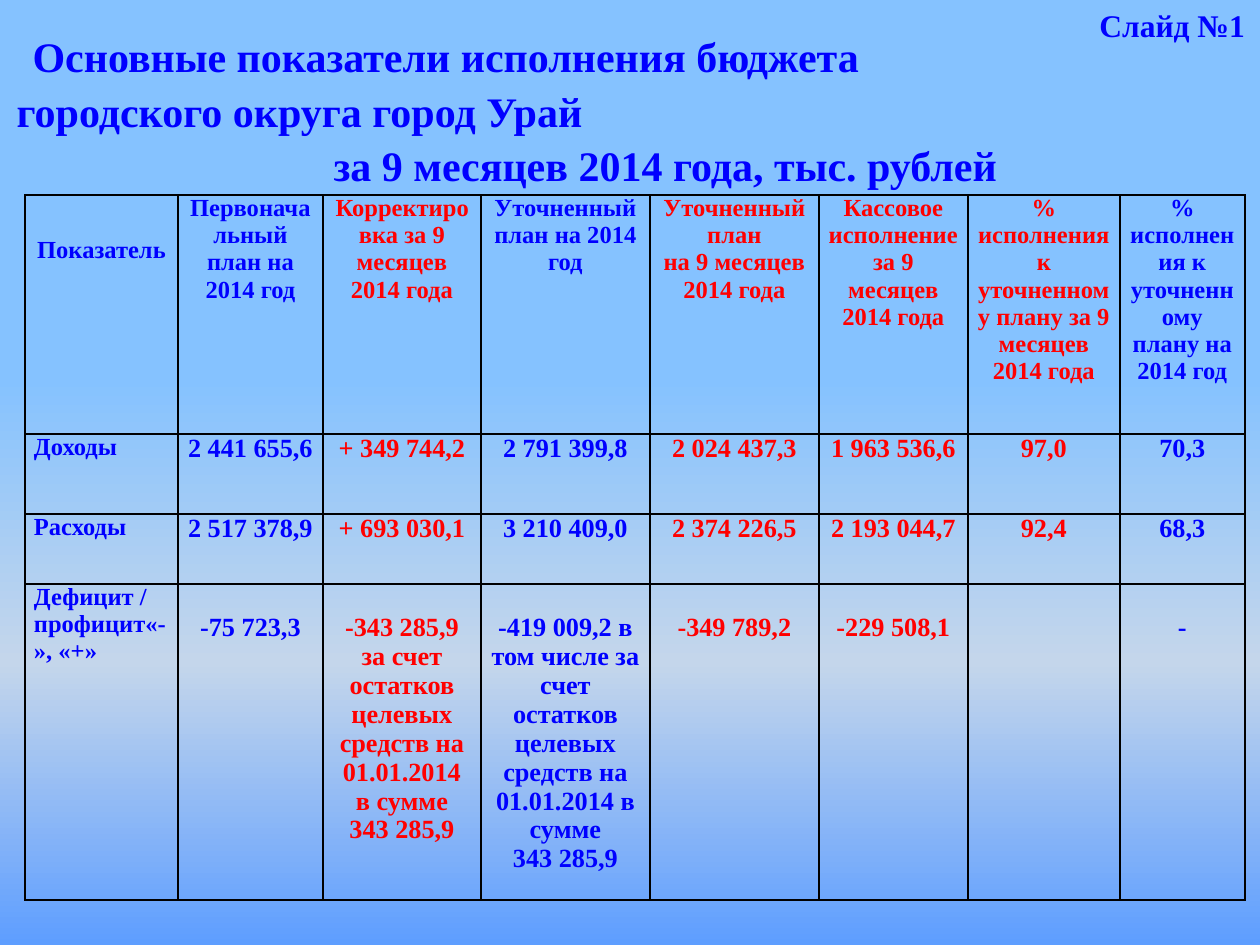
from lxml.etree import SubElement
from copy import deepcopy
from pptx import Presentation
from pptx.dml.color import RGBColor
from pptx.enum.text import MSO_ANCHOR, MSO_AUTO_SIZE, PP_ALIGN
from pptx.oxml.ns import qn
from pptx.util import Emu, Pt

SCALE = 914400 // 126
BLUE, RED, BLACK = "0000FF", "FF0000", "000000"
GRADIENT = [(0.4, "85C2FF"), (0.7, "C4D6EB"), (1.0, "5E9EFF")]
TITLE_LINES = [
    ("Основные показатели исполнения бюджета", 20),
    ("городского округа город Урай", 4),
    ("за 9 месяцев 2014 года, тыс. рублей", 321),
]
COLUMN_WIDTHS = [153, 145, 158, 169, 169, 149, 152, 125]
COLUMN_COLORS = [BLUE, BLUE, RED, BLUE, RED, RED, RED, BLUE]
ROW_HEIGHTS = [239, 80, 70, 316]
ROWS = [
    ["Показатель", "Первоначальный план на 2014 год",
     "Корректировка за 9 месяцев 2014 года", "Уточненный план на 2014 год",
     "Уточненный план\nна 9 месяцев 2014 года",
     "Кассовое исполнение за 9 месяцев 2014 года",
     "% исполнения к уточненному плану за 9 месяцев 2014 года",
     "% исполнения к уточненному плану на 2014 год"],
    ["Доходы", "2 441 655,6", "+ 349 744,2", "2 791 399,8",
     "2 024 437,3", "1 963 536,6", "97,0", "70,3"],
    ["Расходы", "2 517 378,9", "+ 693 030,1", "3 210 409,0",
     "2 374 226,5", "2 193 044,7", "92,4", "68,3"],
    ["Дефицит / профицит«-», «+»", "-75 723,3",
     "-343 285,9\nза счет остатков целевых средств на 01.01.2014\nв сумме\n343 285,9",
     "-419 009,2 в том числе за счет остатков целевых средств на 01.01.2014 в сумме\n343 285,9",
     "-349 789,2", "-229 508,1", "", "-"],
]


def px(length):
    return Emu(length * SCALE)


def color(value):
    return RGBColor.from_string(value)


def apply(target, values):
    for name, value in values.items():
        setattr(target, name, value)


def write_text(frame, text, size, tint, align):
    frame.text = text
    for para in frame.paragraphs:
        para.alignment = align
        for span in para.runs:
            apply(span.font, {"name": "Times New Roman", "size": Pt(size), "bold": True})
            span.font.color.rgb = color(tint)


def paint_background(page):
    fill = page.background.fill
    fill.gradient()
    fill.gradient_angle = 270
    stop_list = page.element.find(".//" + qn("a:gsLst"))
    stop_list.append(deepcopy(stop_list[0]))
    for stop, (position, tint) in zip(fill.gradient_stops, GRADIENT):
        stop.position = position
        stop.color.rgb = color(tint)


def add_title(page):
    title = page.shapes.title
    apply(title, {"left": px(0), "top": px(26), "width": px(1260), "height": px(165)})
    frame = title.text_frame
    write_text(frame, "\n".join(text for text, indent in TITLE_LINES), 24, BLUE, PP_ALIGN.LEFT)
    apply(frame, {"word_wrap": True, "auto_size": MSO_AUTO_SIZE.NONE,
                  "vertical_anchor": MSO_ANCHOR.MIDDLE})
    for para, (text, indent) in zip(frame.paragraphs, TITLE_LINES):
        apply(para, {"line_spacing": 1.08, "space_before": Pt(0)})
        para._p.get_or_add_pPr().set("marL", str(px(indent)))


def add_label(page):
    box = page.shapes.add_textbox(px(1087), px(0), px(173), px(50))
    write_text(box.text_frame, "Слайд №1", 18, BLUE, PP_ALIGN.LEFT)
    box.text_frame.word_wrap = False


def add_borders(cell):
    properties = cell._tc.get_or_add_tcPr()
    for index, side in enumerate(("a:lnL", "a:lnR", "a:lnT", "a:lnB")):
        line = SubElement(properties, qn(side), w=str(Pt(1)))
        fill = SubElement(line, qn("a:solidFill"))
        SubElement(fill, qn("a:srgbClr"), val=BLACK)
        properties.insert(index, line)


def top_margin(row, column):
    if column == 0:
        return 42 if row == 0 else 0
    return 29 if row == len(ROWS) - 1 else 0


def add_budget_table(page):
    table = page.shapes.add_table(
        len(ROWS), len(COLUMN_WIDTHS), px(25), px(195),
        px(sum(COLUMN_WIDTHS)), px(sum(ROW_HEIGHTS))).table
    apply(table, {"first_row": False, "horz_banding": False})
    for column, width in zip(table.columns, COLUMN_WIDTHS):
        column.width = px(width)
    for row, height in zip(table.rows, ROW_HEIGHTS):
        row.height = px(height)
    for row, texts in enumerate(ROWS):
        for column, text in enumerate(texts):
            cell = table.cell(row, column)
            apply(cell, {"margin_left": px(9), "margin_right": px(9),
                         "margin_top": px(top_margin(row, column)), "margin_bottom": px(0)})
            size = 14 if row == 0 or column == 0 else 15
            align = PP_ALIGN.LEFT if row and column == 0 else PP_ALIGN.CENTER
            write_text(cell.text_frame, text, size, COLUMN_COLORS[column], align)
            cell.fill.background()
            add_borders(cell)


def main():
    deck = Presentation()
    apply(deck, {"slide_width": px(1260), "slide_height": px(945)})
    page = deck.slides.add_slide(deck.slide_layouts[5])
    paint_background(page)
    add_title(page)
    add_budget_table(page)
    add_label(page)
    deck.save("out.pptx")


if __name__ == "__main__":
    main()
